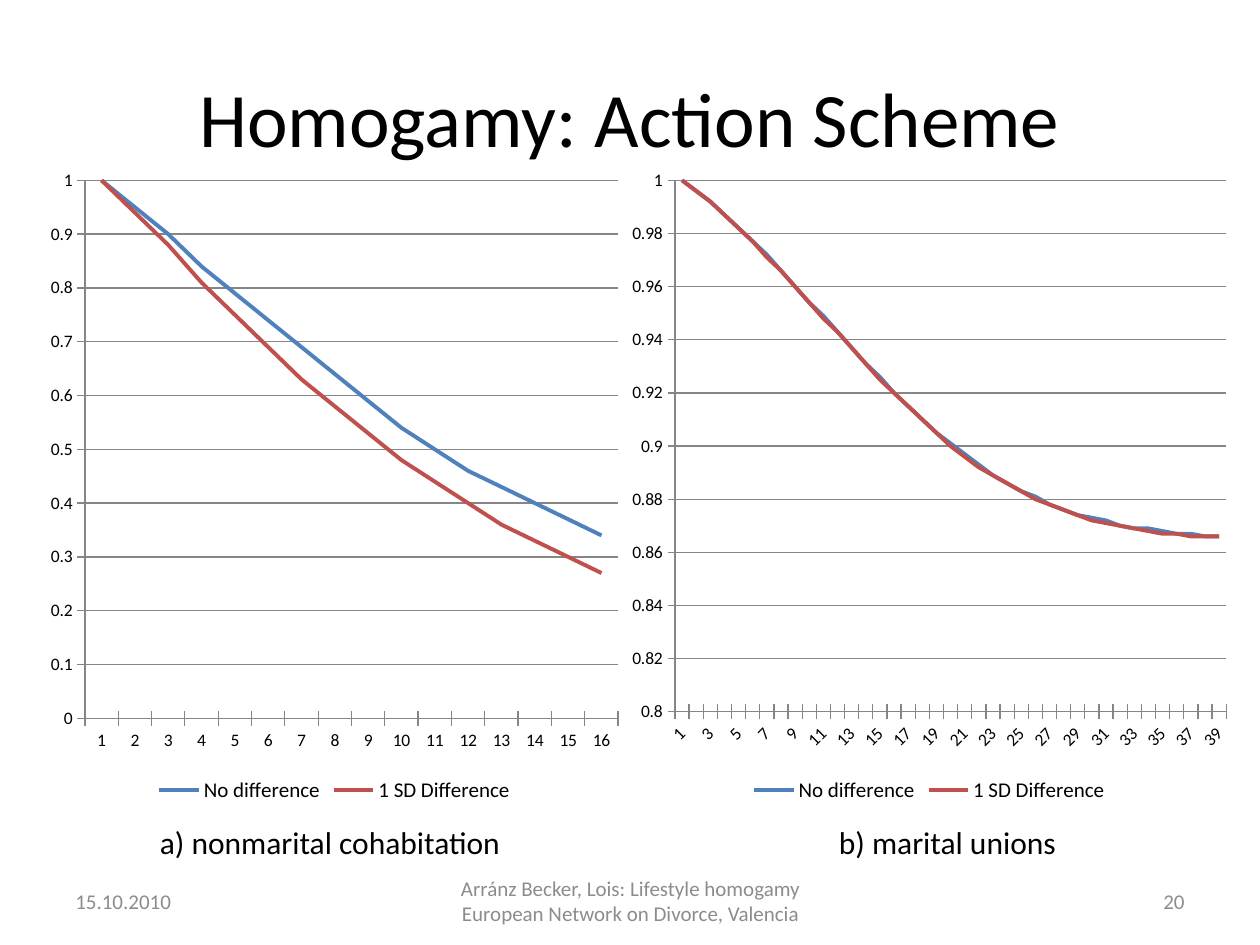
from dataclasses import dataclass

from pptx import Presentation
from pptx.chart.data import CategoryChartData
from pptx.dml.color import RGBColor
from pptx.enum.chart import XL_CHART_TYPE, XL_LEGEND_POSITION, XL_MARKER_STYLE, XL_TICK_MARK
from pptx.enum.text import MSO_ANCHOR, PP_ALIGN
from pptx.util import Inches, Pt

LEFT, CENTER, RIGHT = PP_ALIGN.LEFT, PP_ALIGN.CENTER, PP_ALIGN.RIGHT
TOP, MIDDLE = MSO_ANCHOR.TOP, MSO_ANCHOR.MIDDLE
LINE_CHART = XL_CHART_TYPE.LINE
LEGEND_BOTTOM = XL_LEGEND_POSITION.BOTTOM
NO_MARKER = XL_MARKER_STYLE.NONE
TICK_CROSS = XL_TICK_MARK.CROSS

FONT = "Calibri"
COLORS = {
    "text": "000000",
    "footer": "8C8C8C",
    "axis": "868686",
    "No difference": "4F81BD",
    "1 SD Difference": "C0504D",
}


@dataclass
class Label:
    text: str
    box: tuple[float, float, float, float]
    size: int
    align: PP_ALIGN = LEFT
    anchor: MSO_ANCHOR = MIDDLE
    color: str = "text"


@dataclass
class SurvivalChart:
    box: tuple[float, float, float, float]
    minimum: float
    step: float
    curves: dict[str, list[float]]


LABELS = [
    Label("Homogamy: Action Scheme", (0.5, 0.3, 9, 1.25), 44, CENTER),
    Label("a) nonmarital cohabitation", (1.17, 6.48, 3.2, 0.4), 18, anchor=TOP),
    Label("b) marital unions", (6.56, 6.48, 2.34, 0.4), 18, anchor=TOP),
    Label("15.10.2010", (0.5, 6.95, 2.33, 0.4), 12, color="footer"),
    Label("Arránz Becker, Lois: Lifestyle homogamy European Network on Divorce, Valencia",
          (3.42, 6.95, 3.17, 0.4), 12, CENTER, color="footer"),
    Label("20", (7.17, 6.95, 2.33, 0.4), 12, RIGHT, color="footer"),
]

COHABITATION = SurvivalChart((0.31, 1.25, 4.69, 5.16), 0, 0.1, {
    "No difference": [1, 0.95, 0.9, 0.84, 0.79, 0.74, 0.69, 0.64,
                      0.59, 0.54, 0.5, 0.46, 0.43, 0.4, 0.37, 0.34],
    "1 SD Difference": [1, 0.94, 0.88, 0.81, 0.75, 0.69, 0.63, 0.58,
                        0.53, 0.48, 0.44, 0.4, 0.36, 0.33, 0.3, 0.27],
})
MARRIAGE = SurvivalChart((4.92, 1.25, 4.91, 5.16), 0.8, 0.02, {
    "No difference": [
        1, 0.996, 0.992, 0.987, 0.982, 0.977, 0.972, 0.966, 0.96, 0.954,
        0.949, 0.943, 0.937, 0.931, 0.926, 0.92, 0.915, 0.91, 0.905, 0.901,
        0.897, 0.893, 0.889, 0.886, 0.883, 0.881, 0.878, 0.876, 0.874, 0.873,
        0.872, 0.87, 0.869, 0.869, 0.868, 0.867, 0.867, 0.866, 0.866],
    "1 SD Difference": [
        1, 0.996, 0.992, 0.987, 0.982, 0.977, 0.971, 0.966, 0.96, 0.954,
        0.948, 0.943, 0.937, 0.931, 0.925, 0.92, 0.915, 0.91, 0.905, 0.9,
        0.896, 0.892, 0.889, 0.886, 0.883, 0.88, 0.878, 0.876, 0.874, 0.872,
        0.871, 0.87, 0.869, 0.868, 0.867, 0.867, 0.866, 0.866, 0.866],
})


def rgb(name: str) -> RGBColor:
    return RGBColor.from_string(COLORS[name])


def style_font(font, size: int, color: str = "text") -> None:
    font.name = FONT
    font.size = Pt(size)
    font.color.rgb = rgb(color)


def style_line(line, color: str, width: float) -> None:
    line.color.rgb = rgb(color)
    line.width = Pt(width)


def add_label(slide, label: Label) -> None:
    frame = slide.shapes.add_textbox(*map(Inches, label.box)).text_frame
    frame.word_wrap = True
    frame.vertical_anchor = label.anchor
    paragraph = frame.paragraphs[0]
    paragraph.alignment = label.align
    run = paragraph.add_run()
    run.text = label.text
    style_font(run.font, label.size, label.color)


def add_survival_chart(slide, survival: SurvivalChart) -> None:
    data = CategoryChartData()
    length = len(next(iter(survival.curves.values())))
    data.categories = [str(period) for period in range(1, length + 1)]
    for name, values in survival.curves.items():
        data.add_series(name, values)
    chart = slide.shapes.add_chart(LINE_CHART, *map(Inches, survival.box), data).chart
    style_font(chart.font, 10)
    chart.has_title = False

    # Legend
    chart.has_legend = True
    chart.legend.position = LEGEND_BOTTOM
    chart.legend.include_in_layout = False
    style_font(chart.legend.font, 12)

    # Axes and gridlines
    for axis in (chart.category_axis, chart.value_axis):
        axis.major_tick_mark = TICK_CROSS
        style_line(axis.format.line, "axis", 0.75)
    scale = chart.value_axis
    scale.minimum_scale, scale.maximum_scale = survival.minimum, 1
    scale.major_unit = survival.step
    scale.has_major_gridlines = True
    style_line(scale.major_gridlines.format.line, "axis", 0.75)

    # Curves
    plot = chart.plots[0]
    plot.vary_by_categories = False
    for curve in plot.series:
        curve.smooth = False
        curve.marker.style = NO_MARKER
        style_line(curve.format.line, curve.name, 2.25)


def main() -> None:
    deck = Presentation()
    deck.slide_width, deck.slide_height = Inches(10), Inches(7.5)
    slide = deck.slides.add_slide(deck.slide_layouts[6])
    for survival in (COHABITATION, MARRIAGE):
        add_survival_chart(slide, survival)
    for label in LABELS:
        add_label(slide, label)
    deck.save("out.pptx")


if __name__ == "__main__":
    main()
